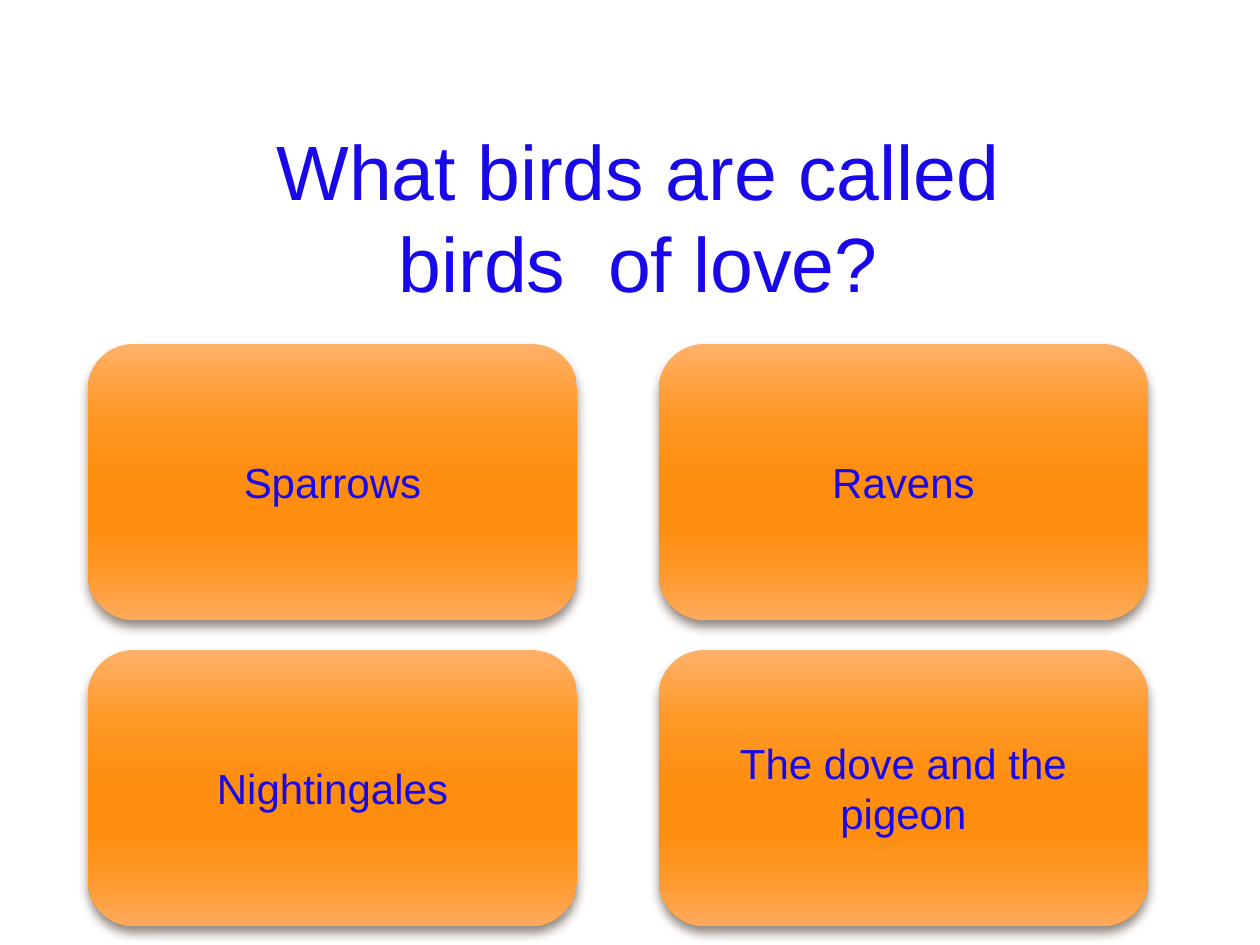
from lxml.etree import SubElement
from pptx import Presentation
from pptx.dml.color import RGBColor
from pptx.enum.shapes import MSO_SHAPE
from pptx.enum.text import MSO_ANCHOR, PP_ALIGN
from pptx.oxml.ns import qn
from pptx.util import Pt

PX = 914400 // 126
BLUE = RGBColor(0x19, 0x09, 0xE9)
SHADOW = RGBColor(0x4E, 0x3B, 0x30)
ORANGE_STOPS = [
    (0, RGBColor(0xFF, 0xB1, 0x6A)),
    (25, RGBColor(0xFF, 0x98, 0x26)),
    (50, RGBColor(0xFF, 0x8D, 0x0F)),
    (65, RGBColor(0xFF, 0x8D, 0x0F)),
    (80, RGBColor(0xFF, 0x97, 0x24)),
    (100, RGBColor(0xFF, 0xAA, 0x5C)),
]
DOWNWARD = "5400000"

QUESTION = "What birds are called birds  of love?"
ANSWERS = [
    ["Sparrows", "Ravens"],
    ["Nightingales", "The dove and the pigeon"],
]
QUESTION_BOX = (219, 118, 839, 106)
GRID_LEFT, GRID_TOP = 88, 344
CARD_WIDTH, CARD_HEIGHT = 489, 276
COLUMN_GAP, ROW_GAP = 82, 30


def scaled(*lengths):
    return [length * PX for length in lengths]


def write_text(shape, text, size):
    frame = shape.text_frame
    frame.word_wrap = True
    frame.text = text
    paragraph = frame.paragraphs[0]
    paragraph.alignment = PP_ALIGN.CENTER
    font = paragraph.runs[0].font
    font.name, font.size = "Arial", Pt(size)
    font.color.rgb = BLUE
    return paragraph


def fill_gradient(shape, stops):
    """Fill from top to bottom with any number of (percent, colour) stops."""
    shape.fill.gradient()
    gradient = shape.fill._xPr.find(qn("a:gradFill"))
    stop_list = gradient.find(qn("a:gsLst"))
    for old_stop in list(stop_list):
        stop_list.remove(old_stop)
    for percent, colour in stops:
        stop = SubElement(stop_list, qn("a:gs"), pos=str(percent * 1000))
        SubElement(stop, qn("a:srgbClr"), val=str(colour))
    gradient.find(qn("a:lin")).set("ang", DOWNWARD)


def add_drop_shadow(shape):
    shape.shadow.inherit = False
    effects = shape._element.spPr.find(qn("a:effectLst"))
    shadow = SubElement(effects, qn("a:outerShdw"), blurRad=str(Pt(6)),
                        dist=str(Pt(4)), dir=DOWNWARD, rotWithShape="0")
    colour = SubElement(shadow, qn("a:srgbClr"), val=str(SHADOW))
    SubElement(colour, qn("a:alpha"), val="60000")


def add_card(page, text, row, column):
    left = GRID_LEFT + column * (CARD_WIDTH + COLUMN_GAP)
    top = GRID_TOP + row * (CARD_HEIGHT + ROW_GAP)
    card = page.shapes.add_shape(MSO_SHAPE.ROUNDED_RECTANGLE,
                                 *scaled(left, top, CARD_WIDTH, CARD_HEIGHT))
    fill_gradient(card, ORANGE_STOPS)
    card.line.fill.background()
    add_drop_shadow(card)
    write_text(card, text, 24)
    card.text_frame.vertical_anchor = MSO_ANCHOR.MIDDLE


def main():
    deck = Presentation()
    deck.slide_width, deck.slide_height = scaled(1260, 945)
    page = deck.slides.add_slide(deck.slide_layouts[6])
    question = page.shapes.add_textbox(*scaled(*QUESTION_BOX))
    write_text(question, QUESTION, 44).line_spacing = Pt(52.5)
    for row, answers in enumerate(ANSWERS):
        for column, answer in enumerate(answers):
            add_card(page, answer, row, column)
    deck.save("out.pptx")


if __name__ == "__main__":
    main()
